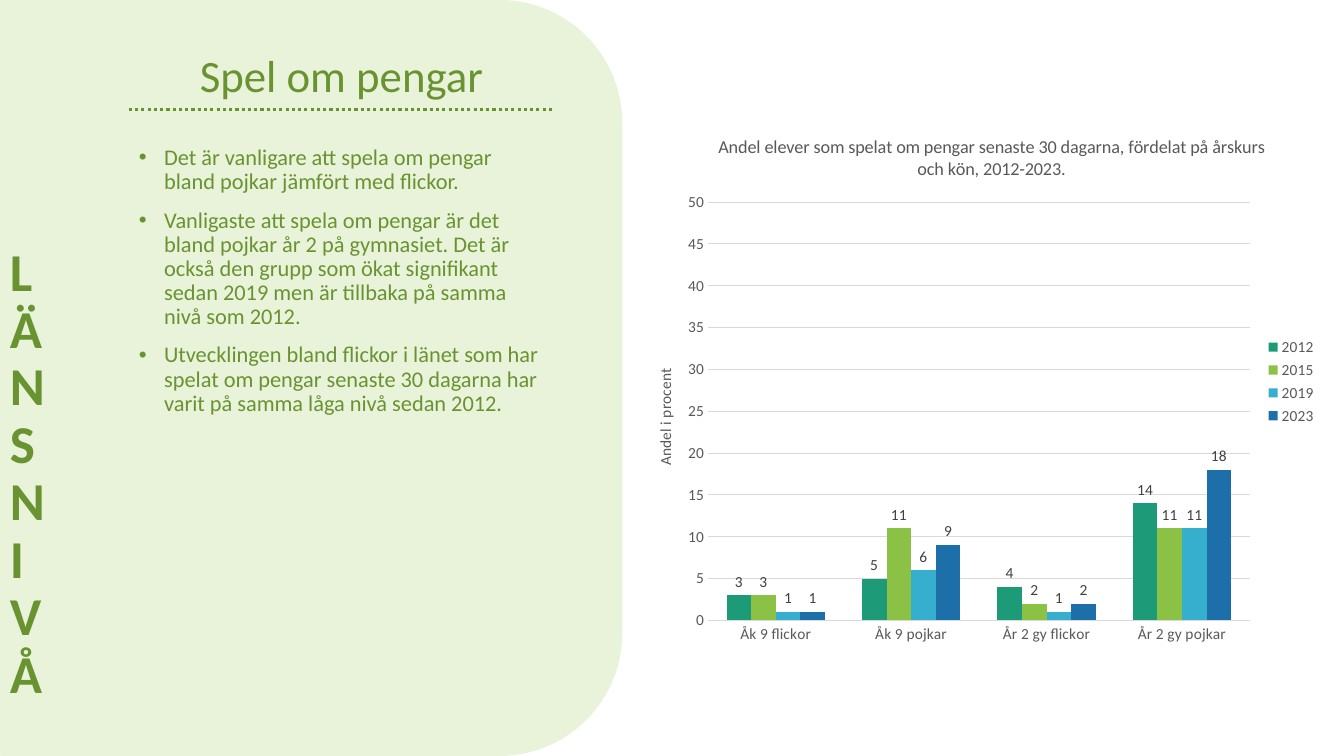
from lxml import etree
from pptx import Presentation
from pptx.chart.data import CategoryChartData
from pptx.dml.color import RGBColor
from pptx.enum.chart import XL_CHART_TYPE, XL_LABEL_POSITION, XL_LEGEND_POSITION, XL_TICK_MARK
from pptx.enum.dml import MSO_LINE
from pptx.enum.shapes import MSO_CONNECTOR, MSO_SHAPE
from pptx.enum.text import MSO_ANCHOR, MSO_AUTO_SIZE, PP_ALIGN
from pptx.oxml.ns import qn
from pptx.util import Pt

GREEN = RGBColor(0x69, 0x93, 0x31)
PALE = RGBColor(0xE8, 0xF3, 0xDA)
GREY = RGBColor(0x59, 0x59, 0x59)
DARK = RGBColor(0x40, 0x40, 0x40)
GRID = RGBColor(0xD9, 0xD9, 0xD9)
FONT = "Calibri"

TITLE = "Spel om pengar"
SIDE = "LÄNSNIVÅ"
BULLETS = [
    "Det är vanligare att spela om pengar bland pojkar jämfört med flickor.",
    "Vanligaste att spela om pengar är det bland pojkar år 2 på gymnasiet. Det är också den "
    "grupp som ökat signifikant sedan 2019 men är tillbaka på samma nivå som 2012.",
    "Utvecklingen bland flickor i länet som har spelat om pengar senaste 30 dagarna har varit "
    "på samma låga nivå sedan 2012.",
]
CHART_TITLE = ("Andel elever som spelat om pengar senaste 30 dagarna, fördelat på årskurs och kön, "
               "2012-2023.")
AXIS_TITLE = "Andel i procent"
GROUPS = ["Åk 9 flickor", "Åk 9 pojkar", "År 2 gy flickor", "År 2 gy pojkar"]
SERIES = [
    ("2012", (3, 5, 4, 14), RGBColor(0x1D, 0x9A, 0x78)),
    ("2015", (3, 11, 2, 11), RGBColor(0x8B, 0xC1, 0x45)),
    ("2019", (1, 6, 1, 11), RGBColor(0x36, 0xAF, 0xCE)),
    ("2023", (1, 9, 2, 18), RGBColor(0x1D, 0x6F, 0xA9)),
]


def set_font(font, size, color, bold=False):
    font.name, font.size, font.bold = FONT, Pt(size), bold
    font.color.rgb = color


def place(shape, left, top, width, height):
    shape.left, shape.top, shape.width, shape.height = Pt(left), Pt(top), Pt(width), Pt(height)


def set_layout(element, index, **values):
    layout = element.find(qn("c:layout"))
    if layout is None:
        layout = etree.Element(qn("c:layout"))
        element.insert(index, layout)
    manual = etree.SubElement(layout, qn("c:manualLayout"))
    if "w" in values:
        etree.SubElement(manual, qn("c:layoutTarget"), val="inner")
    for side in ("xMode", "yMode"):
        etree.SubElement(manual, qn("c:" + side), val="edge")
    for key, value in values.items():
        etree.SubElement(manual, qn("c:" + key), val=str(value))


def write_title(title, text, size, x, y):
    tf = title.text_frame
    tf.text = text
    set_font(tf.paragraphs[0].font, size, GREY)
    set_layout(title._element, 1, x=x, y=y)


prs = Presentation()
prs.slide_width, prs.slide_height = Pt(960), Pt(540)
s = prs.slides.add_slide(prs.slide_layouts[1])

panel = s.shapes.add_shape(MSO_SHAPE.ROUNDED_RECTANGLE, Pt(-82), Pt(0), Pt(526.5), Pt(540))
panel.shadow.inherit = False
panel.fill.solid()
panel.fill.fore_color.rgb = PALE
panel.line.fill.background()
s.shapes._spTree.insert(2, panel._element)

title = s.shapes.title
place(title, 42, 18, 404, 75.5)
tf = title.text_frame
tf.text = TITLE
tf.vertical_anchor = MSO_ANCHOR.MIDDLE
tf.auto_size = MSO_AUTO_SIZE.NONE
p = tf.paragraphs[0]
p.alignment, p.line_spacing = PP_ALIGN.CENTER, 0.9
set_font(p.font, 32, GREEN)

body = s.placeholders[1]
place(body, 92, 101, 303, 343)
tf = body.text_frame
tf.text = "\n".join(BULLETS)
tf.auto_size = MSO_AUTO_SIZE.NONE
for p in tf.paragraphs:
    p.line_spacing, p.space_before = 0.9, Pt(10)
    set_font(p.font, 16, GREEN)
    pPr = p._p.get_or_add_pPr()
    pPr.set("marL", str(Pt(18)))
    pPr.set("indent", str(Pt(-18)))

side = s.shapes.add_textbox(Pt(0), Pt(34), Pt(75.5), Pt(473))
tf = side.text_frame
tf.text = SIDE
tf.word_wrap = True
tf.vertical_anchor = MSO_ANCHOR.BOTTOM
tf._txBody.bodyPr.set("vert", "wordArtVert")
p = tf.paragraphs[0]
p.line_spacing = 0.9
set_font(p.font, 38, GREEN, True)

data = CategoryChartData(number_format="0")
data.categories = GROUPS
for name, values, _ in SERIES:
    data.add_series(name, values)
chart = s.shapes.add_chart(XL_CHART_TYPE.COLUMN_CLUSTERED, Pt(445.5), Pt(78.5), Pt(502.5), Pt(388),
                           data).chart
set_font(chart.font, 11, GREY)
chart.has_title = True
write_title(chart.chart_title, CHART_TITLE, 13, 0.13, 0.04)
chart.has_legend = True
chart.legend.position = XL_LEGEND_POSITION.RIGHT
chart.legend.include_in_layout = False
set_font(chart.legend.font, 11, GREY)

plot = chart.plots[0]
plot.gap_width, plot.overlap = 150, 0
plot.vary_by_categories = False
plot.has_data_labels = True
labels = plot.data_labels
labels.show_value = True
labels.position = XL_LABEL_POSITION.OUTSIDE_END
labels.number_format, labels.number_format_is_linked = "0", False
set_font(labels.font, 11, DARK)
for series, (_, _, color) in zip(plot.series, SERIES):
    series.format.fill.solid()
    series.format.fill.fore_color.rgb = color

cat, val = chart.category_axis, chart.value_axis
for axis in (cat, val):
    axis.major_tick_mark = axis.minor_tick_mark = XL_TICK_MARK.NONE
    set_font(axis.tick_labels.font, 11, GREY)
val.minimum_scale, val.maximum_scale, val.major_unit = 0, 50, 5
val.tick_labels.number_format, val.tick_labels.number_format_is_linked = "0", False
val.format.line.fill.background()
val.has_title = True
write_title(val.axis_title, AXIS_TITLE, 11, 0.04, 0.47)
for line in (cat.format.line, val.major_gridlines.format.line):
    line.color.rgb, line.width = GRID, Pt(0.75)
set_layout(chart._chartSpace.chart.plotArea, 0, x=0.12, y=0.17, w=0.77, h=0.77)

rule = s.shapes.add_connector(MSO_CONNECTOR.STRAIGHT, Pt(92), Pt(78.5), Pt(395), Pt(78.5))
rule.line.color.rgb, rule.line.width = GREEN, Pt(2.25)
rule.line.dash_style = MSO_LINE.ROUND_DOT
etree.SubElement(rule._element.spPr, qn("a:effectLst"))

prs.save("out.pptx")
